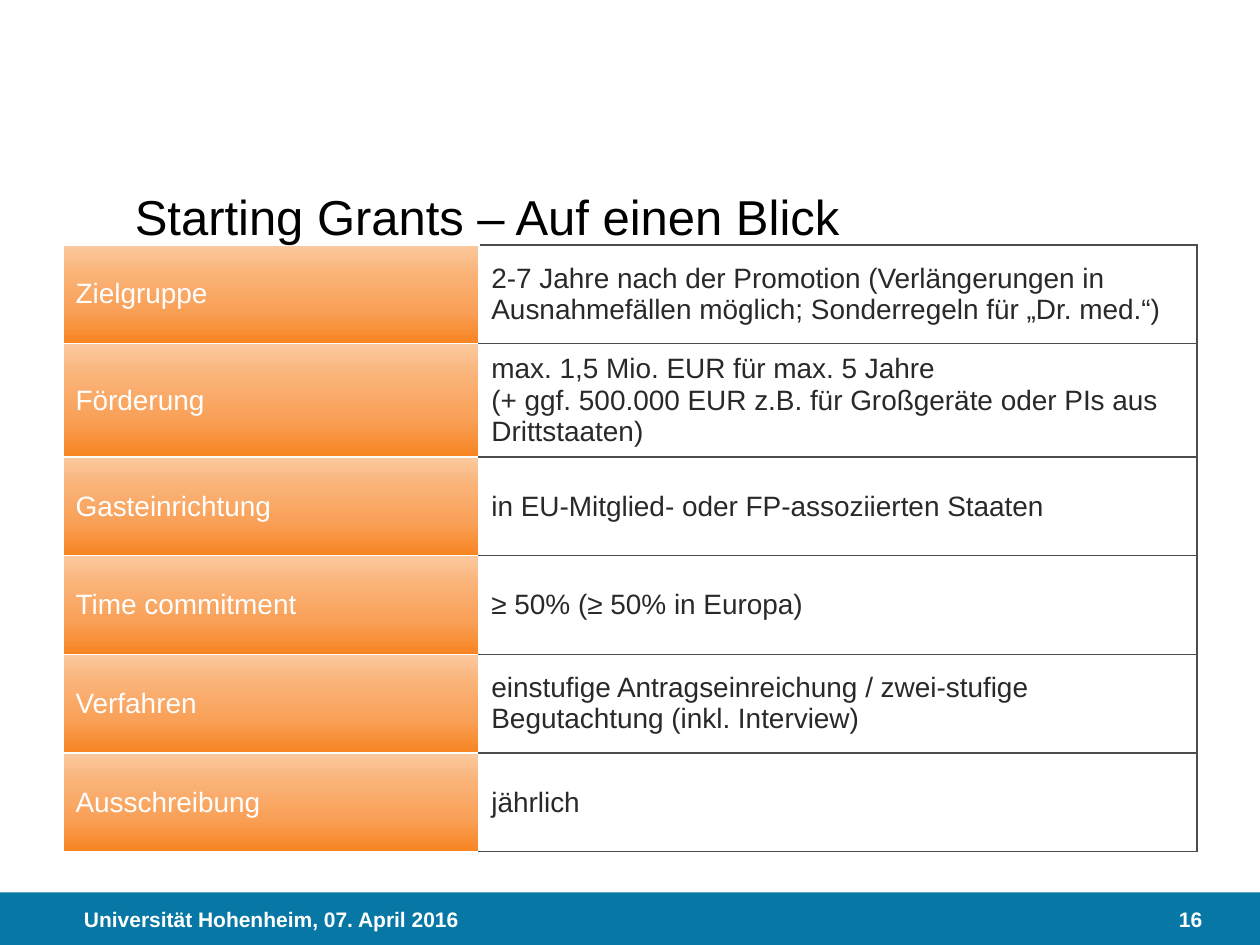
from lxml import etree
from pptx import Presentation
from pptx.dml.color import RGBColor
from pptx.enum.shapes import MSO_SHAPE
from pptx.enum.text import MSO_ANCHOR, PP_ALIGN
from pptx.oxml import parse_xml
from pptx.oxml.ns import nsdecls, qn
from pptx.util import Pt

RECTANGLE = MSO_SHAPE.RECTANGLE
MIDDLE = MSO_ANCHOR.MIDDLE
LEFT, RIGHT = PP_ALIGN.LEFT, PP_ALIGN.RIGHT

# Content
TITLE = "Starting Grants – Auf einen Blick"
FOOTER = "Universität Hohenheim, 07. April 2016"
PAGE_NUMBER = "16"
# Each fact is a label and the lines of its description
FACTS = [
    ("Zielgruppe", ["2-7 Jahre nach der Promotion (Verlängerungen in "
                    "Ausnahmefällen möglich; Sonderregeln für „Dr. med.“)"]),
    ("Förderung", ["max. 1,5 Mio. EUR für max. 5 Jahre",
                   "(+ ggf. 500.000 EUR z.B. für Großgeräte oder PIs aus "
                   "Drittstaaten)"]),
    ("Gasteinrichtung", ["in EU-Mitglied- oder FP-assoziierten Staaten"]),
    ("Time commitment", ["≥ 50% (≥ 50% in Europa)"]),
    ("Verfahren", ["einstufige Antragseinreichung / zwei-stufige "
                   "Begutachtung (inkl. Interview)"]),
    ("Ausschreibung", ["jährlich"]),
]

# Look
FONT = "Arial"
COLORS = {"white": "FFFFFF", "black": "000000", "bar": "0778A5",
          "text": "292929", "border": "4D4D4D"}
LABEL_GRADIENT = [(0, "F78421"), (35, "F9A159"), (70, "FAB276"), (100, "FBC99F")]

# Layout in points
SLIDE_W, SLIDE_H = 720, 540
BAR_TOP, BAR_H = 510, 30
TABLE_LEFT, TABLE_TOP = 36, 140
COLUMN_WIDTHS = [237.6, 410.4]
ROW_H = 56.4


def add_lines(paragraph, lines, size, color, bold=False):
    for index, line in enumerate(lines):
        if index:
            paragraph.add_line_break()
        run = paragraph.add_run()
        run.text = line
        run.font.name = FONT
        run.font.size = Pt(size)
        run.font.bold = bold
        run.font.color.rgb = RGBColor.from_string(COLORS[color])


def add_text(slide, text, box, size, color, bold=False, align=LEFT, inset=(0, 0)):
    frame = slide.shapes.add_textbox(*map(Pt, box)).text_frame
    frame.word_wrap = True
    frame.vertical_anchor = MIDDLE
    frame.margin_left = frame.margin_right = Pt(inset[0])
    frame.margin_top = frame.margin_bottom = Pt(inset[1])
    frame.paragraphs[0].alignment = align
    add_lines(frame.paragraphs[0], [text], size, color, bold)


def set_borders(cell, side_colors):
    properties = cell._tc.get_or_add_tcPr()
    for position, (side, color) in enumerate(side_colors.items()):
        properties.insert(position, parse_xml(
            f'<a:ln{side} {nsdecls("a")} w="{Pt(1)}"><a:solidFill>'
            f'<a:srgbClr val="{COLORS[color]}"/></a:solidFill></a:ln{side}>'))


def set_gradient(cell, stops):
    gradient = etree.SubElement(cell._tc.get_or_add_tcPr(), qn("a:gradFill"))
    stop_list = etree.SubElement(gradient, qn("a:gsLst"))
    for percent, color in stops:
        stop = etree.SubElement(stop_list, qn("a:gs"), pos=str(percent * 1000))
        etree.SubElement(stop, qn("a:srgbClr"), val=color)
    etree.SubElement(gradient, qn("a:lin"), ang=str(270 * 60000), scaled="0")


def fill_cell(cell, lines, color, side_colors):
    cell.vertical_anchor = MIDDLE
    add_lines(cell.text_frame.paragraphs[0], lines, 16, color)
    set_borders(cell, side_colors)


def add_facts(slide):
    table = slide.shapes.add_table(
        len(FACTS), len(COLUMN_WIDTHS), Pt(TABLE_LEFT), Pt(TABLE_TOP),
        Pt(sum(COLUMN_WIDTHS)), Pt(ROW_H * len(FACTS))).table
    table.first_row = table.horz_banding = False
    for column, width in zip(table.columns, COLUMN_WIDTHS):
        column.width = Pt(width)

    label_borders = dict.fromkeys("LRTB", "white")
    description_borders = {**dict.fromkeys("LRTB", "border"), "L": "white"}
    for index, (label, description) in enumerate(FACTS):
        table.rows[index].height = Pt(ROW_H)
        label_cell, description_cell = table.cell(index, 0), table.cell(index, 1)
        fill_cell(label_cell, [label], "white", label_borders)
        set_gradient(label_cell, LABEL_GRADIENT)
        fill_cell(description_cell, description, "text", description_borders)
        description_cell.fill.solid()
        description_cell.fill.fore_color.rgb = RGBColor.from_string(COLORS["white"])


def main():
    presentation = Presentation()
    presentation.slide_width, presentation.slide_height = Pt(SLIDE_W), Pt(SLIDE_H)
    slide = presentation.slides.add_slide(presentation.slide_layouts[6])

    # Footer bar
    bar = slide.shapes.add_shape(RECTANGLE, 0, Pt(BAR_TOP), Pt(SLIDE_W), Pt(BAR_H))
    bar.shadow.inherit = False
    bar.fill.solid()
    bar.fill.fore_color.rgb = RGBColor.from_string(COLORS["bar"])
    bar.line.fill.background()
    add_text(slide, PAGE_NUMBER, (502.5, BAR_TOP, 184.5, BAR_H), 12, "white",
             bold=True, align=RIGHT)
    add_text(slide, FOOTER, (48, BAR_TOP, 226, BAR_H), 12, "white", bold=True)

    # Fact table and title
    add_facts(slide)
    add_text(slide, TITLE, (70, 106, 613.5, 34.5), 28, "black", inset=(7.2, 3.6))

    presentation.save("out.pptx")


if __name__ == "__main__":
    main()
